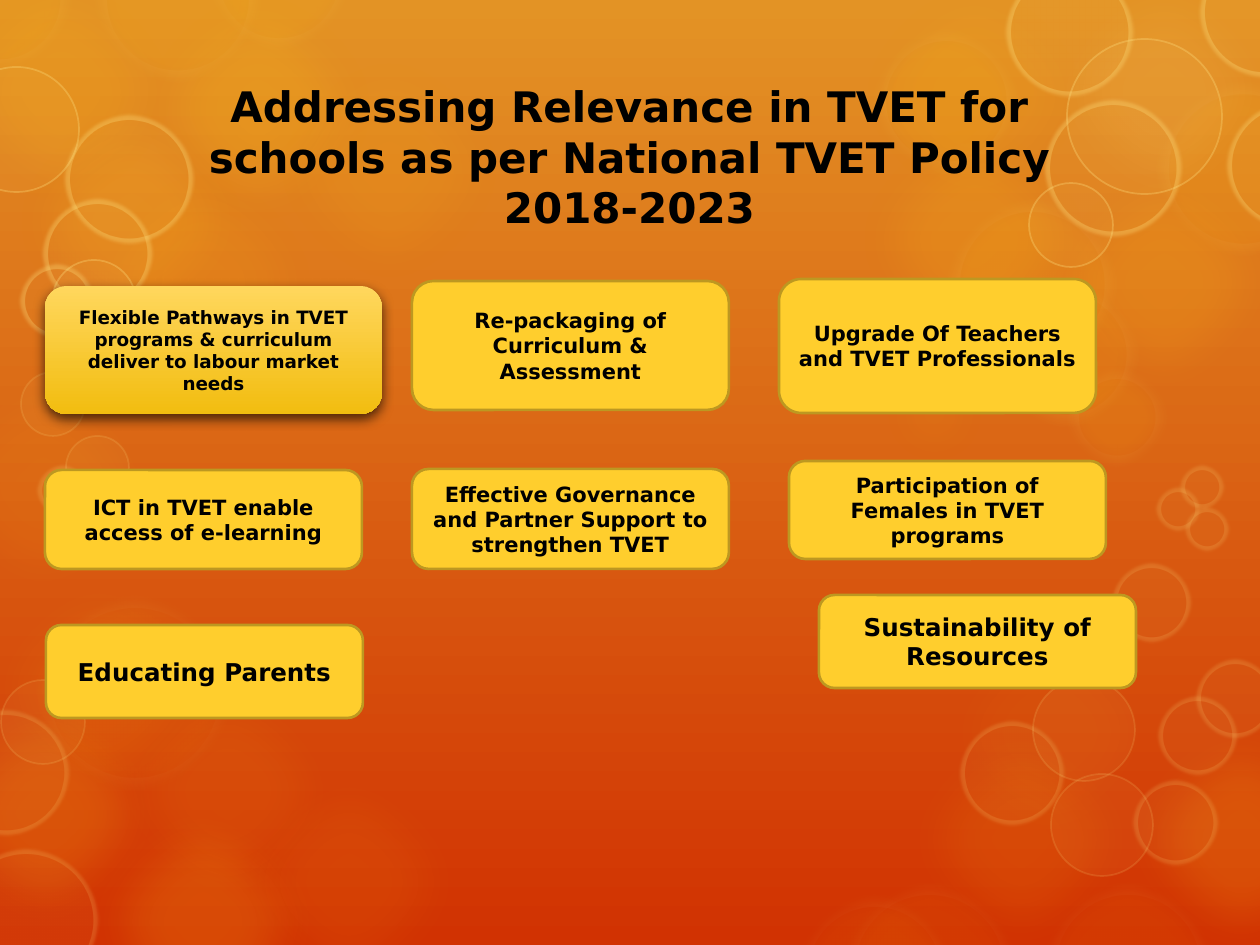
from typing import NamedTuple

from lxml.etree import SubElement as Sub
from pptx import Presentation
from pptx.dml.color import RGBColor as Rgb
from pptx.enum.shapes import MSO_SHAPE as Kind
from pptx.enum.text import MSO_ANCHOR as Anchor, PP_ALIGN as Align
from pptx.oxml.ns import qn
from pptx.util import Pt

WIDE, HIGH = 1260, 945
UNIT = 914400 / 126
FONT = "DejaVu Sans"
BLACK = Rgb(0, 0, 0)
AMBER = Rgb(0xE3, 0x93, 0x25)
RED = Rgb(0xD1, 0x32, 0x02)
GOLD = Rgb(0xFD, 0xC6, 0x1B)
PALE = Rgb(0xFF, 0xE2, 0x81)
CREAM = Rgb(0xFE, 0xEB, 0xAE)
YELLOW = Rgb(0xFF, 0xCE, 0x2D)
OLIVE = Rgb(0xBD, 0x98, 0x21)
LIGHT = Rgb(0xFF, 0xD7, 0x5D)
DEEP = Rgb(0xF2, 0xBD, 0x10)


class Look(NamedTuple):
    fill: Rgb
    alpha: int
    line: Rgb | None = None
    width: int = 0
    glow: int = 0
    soft: int = 0


class Disc(NamedTuple):
    left: int
    top: int
    size: int = 263


class Box(NamedTuple):
    left: int
    top: int
    width: int
    height: int
    text: str
    size: float = 12
    lit: bool = False


def blob(alpha: int, fill: Rgb = GOLD) -> Look:
    return Look(fill, alpha, soft=25)


def haze(alpha: int, glow: int) -> Look:
    return Look(GOLD, alpha, CREAM, 14, glow, 10)


def ring(width: int, glow: int) -> Look:
    return Look(PALE, 5, PALE, width, glow, 2 if width > 1 else 0)


DISCS = {
    blob(5): [Disc(919, 601)],
    blob(8): [Disc(-32, 557), Disc(97, 660), Disc(218, 751), Disc(-88, 355)],
    blob(10): [Disc(72, 151), Disc(258, 39), Disc(843, -37), Disc(890, 708),
               Disc(850, 330, 168)],
    blob(10, PALE): [Disc(1033, -40)],
    blob(14): [Disc(-70, -40)],
    blob(15): [Disc(0, 91), Disc(1033, 151), Disc(843, 108)],
    blob(16): [Disc(72, 790), Disc(1110, 708), Disc(-86, 682)],
    blob(20): [Disc(127, -23)],
    haze(10, 6): [Disc(1157, 82, 173), Disc(874, 29, 144), Disc(948, 200, 168),
                  Disc(994, 282, 144), Disc(1067, 367, 100), Disc(95, -83, 165),
                  Disc(207, -94, 144), Disc(-72, -73, 144)],
    haze(6, 4): [Disc(38, 596, 193), Disc(796, 895, 157), Disc(843, 883, 173),
                 Disc(1044, 883, 168)],
    ring(5, 15): [Disc(-44, 850, 141), Disc(-55, 711, 123), Disc(961, 722, 102),
                  Disc(1134, 781, 83), Disc(1113, 564, 77), Disc(1159, 697, 77),
                  Disc(1197, 660, 77), Disc(1181, 466, 42), Disc(1157, 488, 42),
                  Disc(1186, 508, 42), Disc(38, 466, 49)],
    ring(5, 30): [Disc(66, 116, 126), Disc(44, 200, 107), Disc(21, 265, 72),
                  Disc(1007, -30, 125), Disc(1201, -50, 126),
                  Disc(1228, 103, 125), Disc(1046, 101, 134)],
    ring(1, 15): [Disc(1, 680, 84), Disc(1051, 774, 102), Disc(1033, 679, 102),
                  Disc(21, 372, 64), Disc(66, 436, 63)],
    ring(1, 30): [Disc(-46, 67, 125), Disc(52, 260, 84), Disc(1067, 39, 155),
                  Disc(1029, 183, 84)],
}

TITLE = Box(139, 93, 981, 127, "Addressing Relevance in TVET for schools "
            "as per National TVET Policy 2018-2023", 24)
BOXES = [
    Box(45, 286, 337, 128, "Flexible Pathways in TVET programs & curriculum "
        "deliver to labour market needs", 10.5, True),
    Box(412, 281, 317, 129, "Re-packaging of Curriculum & Assessment"),
    Box(779, 279, 317, 134, "Upgrade Of Teachers and TVET Professionals"),
    Box(45, 470, 317, 99, "ICT in TVET enable access of e-learning"),
    Box(412, 469, 317, 100,
        "Effective Governance and Partner Support to strengthen TVET"),
    Box(789, 461, 317, 98, "Participation of Females in TVET programs"),
    Box(46, 625, 317, 93, "Educating Parents", 14),
    Box(819, 595, 317, 93, "Sustainability of Resources", 14),
]


def px(num: int) -> int:
    return round(num * UNIT)


def blend(fill, top: Rgb, base: Rgb) -> None:
    fill.gradient()
    fill.gradient_angle = 270
    for stop, tone in zip(fill.gradient_stops, (top, base)):
        stop.color.rgb = tone


def fade(tone, alpha: int) -> None:
    Sub(tone, qn("a:alpha"), val=str(alpha * 1000))


def effect(shape, name: str, **args: int):
    group = shape.element.spPr.find(qn("a:effectLst"))
    return Sub(group, qn(name), {key: str(val) for key, val in args.items()})


def write(shape, text: str, *, size: float, tone: Rgb = BLACK,
          bold: bool = True) -> None:
    frame = shape.text_frame
    frame.word_wrap = True
    frame.vertical_anchor = Anchor.MIDDLE
    para = frame.paragraphs[0]
    para.alignment = Align.CENTER
    run = para.add_run()
    run.text = text
    font = run.font
    font.name, font.size, font.bold = FONT, Pt(size), bold
    font.color.rgb = tone


def draw_disc(shapes, disc: Disc, look: Look) -> None:
    left, top, size = map(px, disc)
    shape = shapes.add_shape(Kind.OVAL, left, top, size, size)
    shape.shadow.inherit = False
    shape.fill.solid()
    shape.fill.fore_color.rgb = look.fill
    if look.line is None:
        shape.line.fill.background()
    else:
        shape.line.color.rgb = look.line
        shape.line.width = Pt(look.width)
    tones = list(shape.element.spPr.iter(qn("a:srgbClr")))
    for tone, alpha in zip(tones, (look.alpha, look.glow)):
        fade(tone, alpha)
    if look.soft:
        effect(shape, "a:softEdge", rad=Pt(look.soft))


def draw_box(shapes, box: Box) -> None:
    shape = shapes.add_shape(Kind.ROUNDED_RECTANGLE, *map(px, box[:4]))
    shape.shadow.inherit = False
    if box.lit:
        blend(shape.fill, LIGHT, DEEP)
        shape.line.fill.background()
        shade = effect(shape, "a:outerShdw", blurRad=Pt(7), dist=Pt(3),
                       dir=5400000, rotWithShape=0)
        fade(Sub(shade, qn("a:srgbClr"), val=str(BLACK)), 65)
    else:
        shape.fill.solid()
        shape.fill.fore_color.rgb = YELLOW
        shape.line.color.rgb = OLIVE
        shape.line.width = Pt(1.5)
    write(shape, box.text, size=box.size)


def settle(slide, layout) -> None:
    tree = layout.shapes.element
    for holder in list(layout.placeholders):
        tree.remove(holder.element)
    for shape in list(slide.shapes):
        tree.append(shape.element)


def main() -> None:
    deck = Presentation()
    deck.slide_width, deck.slide_height = px(WIDE), px(HIGH)
    layout = deck.slide_layouts[6]
    slide = deck.slides.add_slide(layout)
    blend(slide.background.fill, AMBER, RED)
    for look, discs in DISCS.items():
        for disc in discs:
            draw_disc(slide.shapes, disc, look)
    settle(slide, layout)
    head = slide.shapes.add_textbox(*map(px, TITLE[:4]))
    write(head, TITLE.text, size=TITLE.size)
    for box in BOXES:
        draw_box(slide.shapes, box)
    deck.save("out.pptx")


if __name__ == "__main__":
    main()
